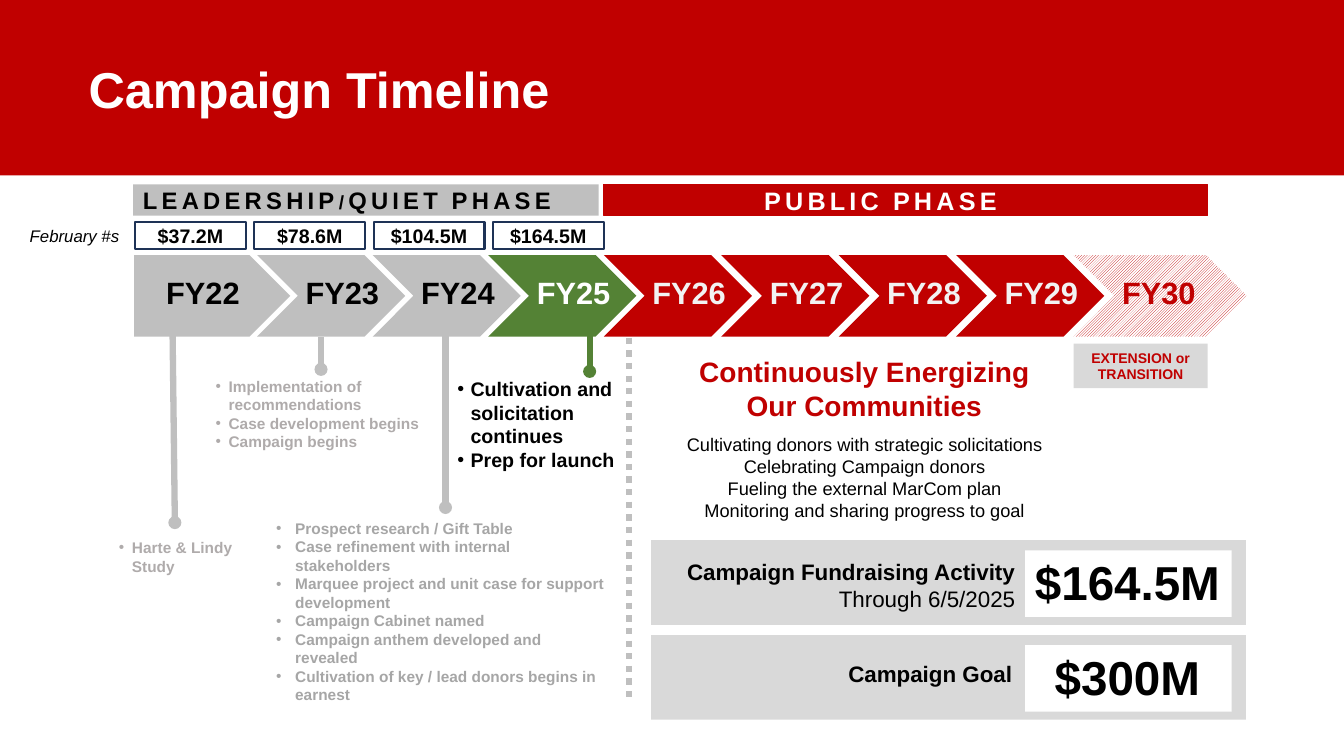
from pptx import Presentation
from pptx.dml.color import RGBColor
from pptx.enum.dml import MSO_LINE, MSO_PATTERN
from pptx.enum.shapes import MSO_CONNECTOR, MSO_SHAPE
from pptx.enum.text import MSO_ANCHOR, MSO_AUTO_SIZE, PP_ALIGN
from pptx.oxml.ns import qn
from pptx.util import Inches, Pt
from lxml.etree import SubElement

# Theme: colours, and type styles as (size, bold, italic, colour)
THEME = {
    "font": "Arial",
    "red": "C00000", "green": "548235", "gray": "BFBFBF", "panel": "D9D9D9",
    "white": "FFFFFF", "black": "000000", "navy": "1E3256",
    "pale": "F2F2F2", "past": "AFABAB", "past2": "A6A6A6",
    "title": (36, True, False, "white"),
    "quiet": (17, True, False, "black"),
    "public": (18, True, False, "white"),
    "year": (22, True, False, "black"),
    "money": (14, True, False, "black"),
    "aside": (12, False, True, "black"),
    "done": (11, True, False, "past"),
    "done2": (11, True, False, "past2"),
    "now": (14, True, False, "black"),
    "theme": (20, True, False, "red"),
    "body": (13, False, False, "black"),
    "note": (10, True, False, "red"),
    "label": (16, True, False, "black"),
    "date": (16, False, False, "black"),
    "figure": (34, True, False, "black"),
}
LEFT, CENTER, RIGHT = PP_ALIGN.LEFT, PP_ALIGN.CENTER, PP_ALIGN.RIGHT
RECT = MSO_SHAPE.RECTANGLE

prs = Presentation()
prs.slide_width, prs.slide_height = Inches(13.33), Inches(7.5)
s = prs.slides.add_slide(prs.slide_layouts[6])

# Grid of 160 columns by 90 rows
COL, ROW = prs.slide_width / 160, prs.slide_height / 90


def add(kind, x, y, w, h, fill=None, line=None, weight=1):
    """Add a preset shape, or a text box when kind is None."""
    at = [int(v) for v in (x * COL, y * ROW, w * COL, h * ROW)]
    if kind is None:
        sp = s.shapes.add_textbox(*at)
        sp.text_frame.word_wrap = True
        sp.text_frame.auto_size = MSO_AUTO_SIZE.SHAPE_TO_FIT_TEXT
        return sp
    sp = s.shapes.add_shape(kind, *at)
    sp.shadow.inherit = False
    sp.text_frame.vertical_anchor = MSO_ANCHOR.MIDDLE
    sp.fill.solid()
    sp.fill.fore_color.rgb = RGBColor.from_string(THEME[fill])
    if line:
        sp.line.color.rgb = RGBColor.from_string(THEME[line])
        sp.line.width = Pt(weight)
    else:
        sp.line.fill.background()
    return sp


def write(sp, lines, style, align=CENTER, color=None, bullet=0, before=0, spread=0):
    """Append one paragraph per line of text; bullet is the indent in inches."""
    size, bold, italic, ink = THEME[style]
    tf = sp.text_frame
    for i, text in enumerate(lines):
        p = tf.add_paragraph() if tf.text else tf.paragraphs[0]
        p.alignment = align
        if before and i == 0:
            p.space_before = Pt(before)
        if bullet:
            pPr = p._p.get_or_add_pPr()
            pPr.set("marL", str(Inches(bullet)))
            pPr.set("indent", str(-Inches(bullet)))
            SubElement(pPr, qn("a:buFont")).set("typeface", THEME["font"])
            SubElement(pPr, qn("a:buChar")).set("char", "•")
        r = p.add_run()
        r.text = text
        fmt = {"name": THEME["font"], "size": Pt(size), "bold": bold, "italic": italic}
        for key, value in fmt.items():
            setattr(r.font, key, value)
        r.font.color.rgb = RGBColor.from_string(THEME[color or ink])
        if spread:
            rPr = r._r.get_or_add_rPr()
            rPr.set("spc", str(spread * 100))
            rPr.set("cap", "small")


# Header
add(RECT, 0, 0, 160, 20.88, "red")
sp = add(None, 9.36, 5.4, 138, 11.04)
sp.text_frame.auto_size = MSO_AUTO_SIZE.NONE
sp.text_frame.vertical_anchor = MSO_ANCHOR.MIDDLE
write(sp, ["Campaign Timeline"], "title", LEFT)
sp.text_frame.paragraphs[0].line_spacing = 0.9

# Phase bars
PUBLIC_X = 71.88
sp = add(RECT, 15.84, 21.96, 55.44, 3.72, "gray")
write(sp, ["LEADERSHIP/QUIET PHASE"], "quiet", spread=3)
sp = add(RECT, PUBLIC_X, 21.96, 71.88, 3.72, "red", "red")
write(sp, ["PUBLIC PHASE"], "public", spread=3)

# February totals
sp = add(RECT, 2.28, 26.4, 13.2, 3.24, "white")
write(sp, ["February #s"], "aside")
for i, total in enumerate(["$37.2M", "$78.6M", "$104.5M", "$164.5M"]):
    sp = add(RECT, 16.08 + 14.2 * i, 26.4, 13.2, 3.24, "white", "navy", 1.5)
    write(sp, [total], "money")

# Year arrows, spaced outwards from the start of the public phase
years = [("gray", "black")] * 3 + [("green", "white")] + [("red", "pale")] * 4 + [("red", "red")]
for i, (fill, ink) in enumerate(years):
    kind, w, inset = MSO_SHAPE.CHEVRON, 17.64, 4.6
    x = PUBLIC_X + (i - 4) * (13.76 if i < 4 else 13.98)
    if i == 0:
        kind, x, w, inset = MSO_SHAPE.PENTAGON, 15.96, 18.6, 2.64
    if i == 8:
        w = 20.64
    sp = add(kind, x, 30.36, w, 9.72, fill)
    if i == 8:
        sp.fill.patterned()
        sp.fill.pattern = MSO_PATTERN.LIGHT_UPWARD_DIAGONAL
        sp.fill.fore_color.rgb = RGBColor.from_string(THEME["red"])
        sp.fill.back_color.rgb = RGBColor.from_string(THEME["white"])
    sp = add(None, x + inset, 32.04, 11.28, 5.64)
    sp.text_frame.word_wrap = False
    write(sp, [f"FY{22 + i}"], "year", LEFT, ink)

# Stems with dots, and the dotted divider
DOT = 1.56
stems = [
    (20.52, 37.44, 20.82, 62.22, "gray"),
    (38.22, 40.08, 38.22, 43.98, "gray"),
    (53.04, 38.4, 53.04, 60.42, "gray"),
    (70.2, 39.48, 70.2, 44.22, "green"),
    (74.88, 40.2, 74.88, 83.16, None),
]
for x1, y1, x2, y2, color in stems:
    ends = [int(v) for v in (x1 * COL, y1 * ROW, x2 * COL, y2 * ROW)]
    cn = s.shapes.add_connector(MSO_CONNECTOR.STRAIGHT, *ends)
    cn.line.color.rgb = RGBColor.from_string(THEME[color or "gray"])
    cn.line.width = Pt(4.5)
    if color:
        add(MSO_SHAPE.OVAL, x2 - DOT / 2, y2 - DOT / 2, DOT, DOT, color)
    else:
        cn.line.dash_style = MSO_LINE.ROUND_DOT
    SubElement(cn._element.spPr, qn("a:effectLst"))

# Yearly activities
activities = [
    ((12.96, 63.48, 17.28, 5.64), "done", 0.13, ["Harte & Lindy Study"]),
    ((24.48, 44.28, 27.24, 10.08), "done", 0.13, [
        "Implementation of recommendations", "Case development begins", "Campaign begins"]),
    ((53.28, 44.28, 24.24, 12.48), "now", 0.13, [
        "Cultivation and solicitation continues", "Prep for launch"]),
    ((31.68, 61.2, 41.64, 23.4), "done2", 0.19, [
        "Prospect research / Gift Table",
        "Case refinement with internal stakeholders",
        "Marquee project and unit case for support development",
        "Campaign Cabinet named",
        "Campaign anthem developed and revealed",
        "Cultivation of key / lead donors begins in earnest"]),
]
for at, style, indent, lines in activities:
    write(add(None, *at), lines, style, LEFT, bullet=indent)

# Public phase message
sp = add(None, 69.12, 41.64, 67.56, 21.96)
write(sp, ["Continuously Energizing", "Our Communities"], "theme")
write(sp, ["Cultivating donors with strategic solicitations",
           "Celebrating Campaign donors",
           "Fueling the external MarCom plan",
           "Monitoring and sharing progress to goal"], "body", before=8.4)
sp = add(RECT, 127.8, 40.92, 15.96, 5.28, "panel")
write(sp, ["EXTENSION or TRANSITION"], "note")

# Result panels
panels = [
    (64.32, 78, 1.52, "Campaign Fundraising Activity", ["Through 6/5/2025"], "$164.5M"),
    (75.6, 77.64, 2.36, "Campaign Goal", [], "$300M"),
]
for y, label_x, drop, label, date, figure in panels:
    add(RECT, 77.52, y, 70.8, 10.08, "panel")
    add(RECT, 122.04, y + 1.2, 24.6, 7.92, "white")
    sp = add(None, label_x, y + drop, 44.04, 4.5 + 3.2 * len(date))
    write(sp, [label], "label", RIGHT)
    write(sp, date, "date", RIGHT)
    write(add(None, 119.52, y + 0.92, 29.4, 8.08), [figure], "figure")

prs.save("out.pptx")
